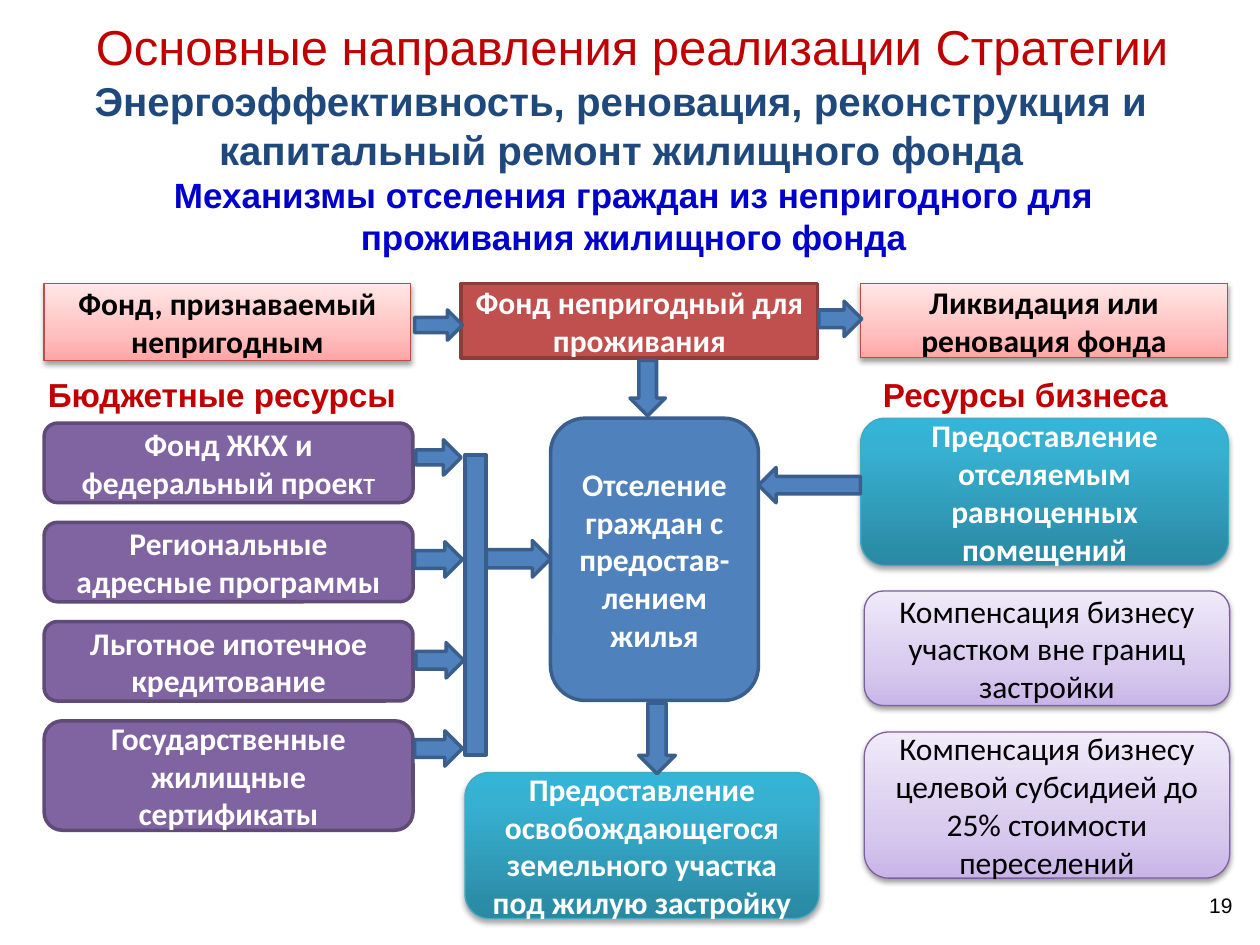
from copy import deepcopy

from lxml import etree
from pptx import Presentation
from pptx import util as u
from pptx.dml.color import RGBColor
from pptx.enum import shapes, text
from pptx.oxml.ns import qn

# ---- Theme: fill is one colour or (position, colour) stops from bottom to top
THEME = {
    "heading": "Arial", "body": "Calibri",
    "title": 28, "subtitle": 23, "topic": 20, "label": 19, "box": 18, "number": 12,
    "red": "C00000", "navy": "1F497D", "blue": "0000CC", "black": "000000",
    "white": "FFFFFF",
}
STYLES = {
    "pink": dict(fill=[(0, "FFA6A5"), (.35, "FFC0BF"), (1, "FFE7E7")],
                 line="BF4C48", width=.75, shadow=38, color="black", bold=True),
    "crimson": dict(fill="C0504D", line="8E3B39", width=2, color="white", bold=True),
    "steel": dict(fill="4F81BD", line="3A5F8C", width=2, color="white", bold=True),
    "purple": dict(fill="8064A2", line="5F4A78", width=2, color="white", bold=True),
    "teal": dict(fill=[(0, "2A88A2"), (.8, "37B1D2"), (1, "34B4D6")],
                 line="46AAC5", width=.75, shadow=35, color="white", bold=True),
    "lilac": dict(fill=[(0, "C9B5E8"), (.35, "D8CBEE"), (1, "F0EAF9")],
                  line="7D60A0", width=.75, shadow=38, color="black", bold=False),
}

# ---- Content
# Headings: paragraphs, (left, top, width, height), size, colour, bold, alignment
HEADINGS = [
    (["Основные направления реализации Стратегии"],
     (14.4, 0, 693.4, 52.6), "title", "red", False, "CENTER"),
    (["Энергоэффективность, реновация, реконструкция и капитальный ремонт жилищного фонда"],
     (26.6, 40.3, 657.4, 65.5), "subtitle", "navy", True, "CENTER"),
    (["Механизмы отселения граждан из непригодного для", "проживания жилищного фонда"],
     (25.2, 95.8, 673.9, 55.4), "topic", "blue", True, "CENTER"),
    (["Бюджетные ресурсы"], (20.2, 210.2, 241.2, 30.2), "label", "red", True, "LEFT"),
    (["Ресурсы бизнеса"], (497.5, 210.2, 201.6, 30.2), "label", "red", True, "LEFT"),
    (["19"], (666, 502.6, 45.4, 28.8), "number", "black", False, "RIGHT"),
]
# Housing stock: text, style, left, width, height
STOCK = [
    ("Фонд, признаваемый непригодным", "pink", 25.2, 209.5, 44),
    ("Фонд непригодный для проживания", "crimson", 263.5, 203.8, 42.5),
    ("Ликвидация или реновация фонда", "pink", 491.8, 209.5, 42.5),
]
# Budget sources: text, closing regular letter, height, arrow (left, top, width)
BUDGET = [
    ("Фонд ЖКХ и федеральный проек", "т", 45.4, (237.6, 251.3, 25.9)),
    ("Региональные адресные программы", "", 45.4, (236.9, 309.6, 27.4)),
    ("Льготное ипотечное кредитование", "", 45.4, (237.6, 367.2, 27.4)),
    ("Государственные жилищные сертификаты", "", 62.6, (236.9, 417.6, 27.4)),
]
# Resettlement and business: paragraphs, style, (left, top, width, height)
BOXES = [
    (["Отселение граждан с предостав-лением", "жилья"], "steel", (314.6, 239, 118.8, 161.3)),
    (["Предоставление освобождающегося земельного участка под жилую застройку"],
     "teal", (265.7, 441.4, 202.3, 83.5)),
    (["Предоставление отселяемым равноценных помещений"],
     "teal", (491.8, 239, 210.2, 84.2)),
    (["Компенсация бизнесу участком вне границ застройки"],
     "lilac", (493.9, 337.7, 208.8, 65.5)),
    (["Компенсация бизнесу целевой субсидией до 25% стоимости переселений"],
     "lilac", (493.9, 418.3, 208.8, 83.5)),
]
# Flow arrows and the collecting bar
FLOW = [
    ("RIGHT_ARROW", (236.9, 177.1, 27.4, 17.3)),
    ("RIGHT_ARROW", (468, 172.1, 24.5, 20.2)),
    ("DOWN_ARROW", (360, 205.9, 20.2, 31.7)),
    ("DOWN_ARROW", (365, 401.8, 20.9, 40.3)),
    ("RECTANGLE", (265.7, 259.9, 12.2, 171.4)),
    ("RIGHT_ARROW", (277.9, 308.9, 36.7, 20.9)),
    ("LEFT_ARROW", (433.4, 267.1, 58.3, 20.2)),
]
STOCK_TOP = 162
BUDGET_LEFT, BUDGET_TOP, BUDGET_WIDTH, BUDGET_PITCH = 25.2, 241.8, 210.8, 56.7
ARROW_HEIGHT = 20.2

prs = Presentation()
prs.slide_width, prs.slide_height = u.Pt(720), u.Pt(540)
s = prs.slides.add_slide(prs.slide_layouts[6])


def rgb(name):
    return RGBColor.from_string(THEME.get(name, name))


def put_text(sp, paragraphs, size="box", font="body", color="black", bold=False,
             align="CENTER", anchor="MIDDLE", regular_end=""):
    tf = sp.text_frame
    tf.word_wrap = True
    tf.vertical_anchor = getattr(text.MSO_ANCHOR, anchor)
    for i, line in enumerate(paragraphs):
        p = tf.paragraphs[0] if i == 0 else tf.add_paragraph()
        p.alignment = getattr(text.PP_ALIGN, align)
        for part, is_bold in ((line, bold), (regular_end, False)):
            if part:
                r = p.add_run()
                r.text = part
                r.font.name, r.font.size = THEME[font], u.Pt(THEME[size])
                r.font.bold, r.font.color.rgb = is_bold, rgb(color)


def add_shadow(sp, alpha):
    effects = sp._element.spPr.find(qn("a:effectLst"))
    shadow = etree.SubElement(effects, qn("a:outerShdw"), blurRad=str(u.Pt(3.1)),
                              dist=str(u.Pt(1.7)), dir="5400000", rotWithShape="0")
    color = etree.SubElement(shadow, qn("a:srgbClr"), val=THEME["black"])
    etree.SubElement(color, qn("a:alpha"), val=str(alpha * 1000))


def add_box(kind, place, style, paragraphs=(), regular_end=""):
    look = STYLES[style]
    sp = s.shapes.add_shape(getattr(shapes.MSO_SHAPE, kind), *map(u.Pt, place))
    sp.shadow.inherit = False
    if isinstance(look["fill"], str):
        sp.fill.solid()
        sp.fill.fore_color.rgb = rgb(look["fill"])
    else:
        sp.fill.gradient()
        sp.fill.gradient_angle = 90
        stops = sp._element.spPr.find(".//" + qn("a:gsLst"))
        stops.append(deepcopy(stops[0]))
        for stop, (position, color) in zip(sp.fill.gradient_stops, look["fill"]):
            stop.position, stop.color.rgb = position, rgb(color)
    sp.line.color.rgb, sp.line.width = rgb(look["line"]), u.Pt(look["width"])
    if "shadow" in look:
        add_shadow(sp, look["shadow"])
    put_text(sp, paragraphs, color=look["color"], bold=look["bold"],
             regular_end=regular_end)
    return sp


# Housing stock row
for label, style, left, width, height in STOCK:
    add_box("RECTANGLE", (left, STOCK_TOP, width, height), style, [label])

# Resettlement, land and business boxes
for paragraphs, style, place in BOXES:
    add_box("ROUNDED_RECTANGLE", place, style, paragraphs)

# Budget column with its arrows
for i, (label, end, height, (left, top, width)) in enumerate(BUDGET):
    add_box("ROUNDED_RECTANGLE",
            (BUDGET_LEFT, BUDGET_TOP + i * BUDGET_PITCH, BUDGET_WIDTH, height),
            "purple", [label], end)
    arrow = add_box("RIGHT_ARROW", (left, top, width, ARROW_HEIGHT), "steel")
    if i == 0:
        arrow.adjustments[0] = .42

# Flow arrows
for kind, place in FLOW:
    add_box(kind, place, "steel")

# Headings, column labels and page number
for paragraphs, place, size, color, bold, align in HEADINGS:
    put_text(s.shapes.add_textbox(*map(u.Pt, place)), paragraphs, size=size,
             font="heading", color=color, bold=bold, align=align,
             anchor="MIDDLE" if size in ("title", "number") else "TOP")

prs.save("out.pptx")
